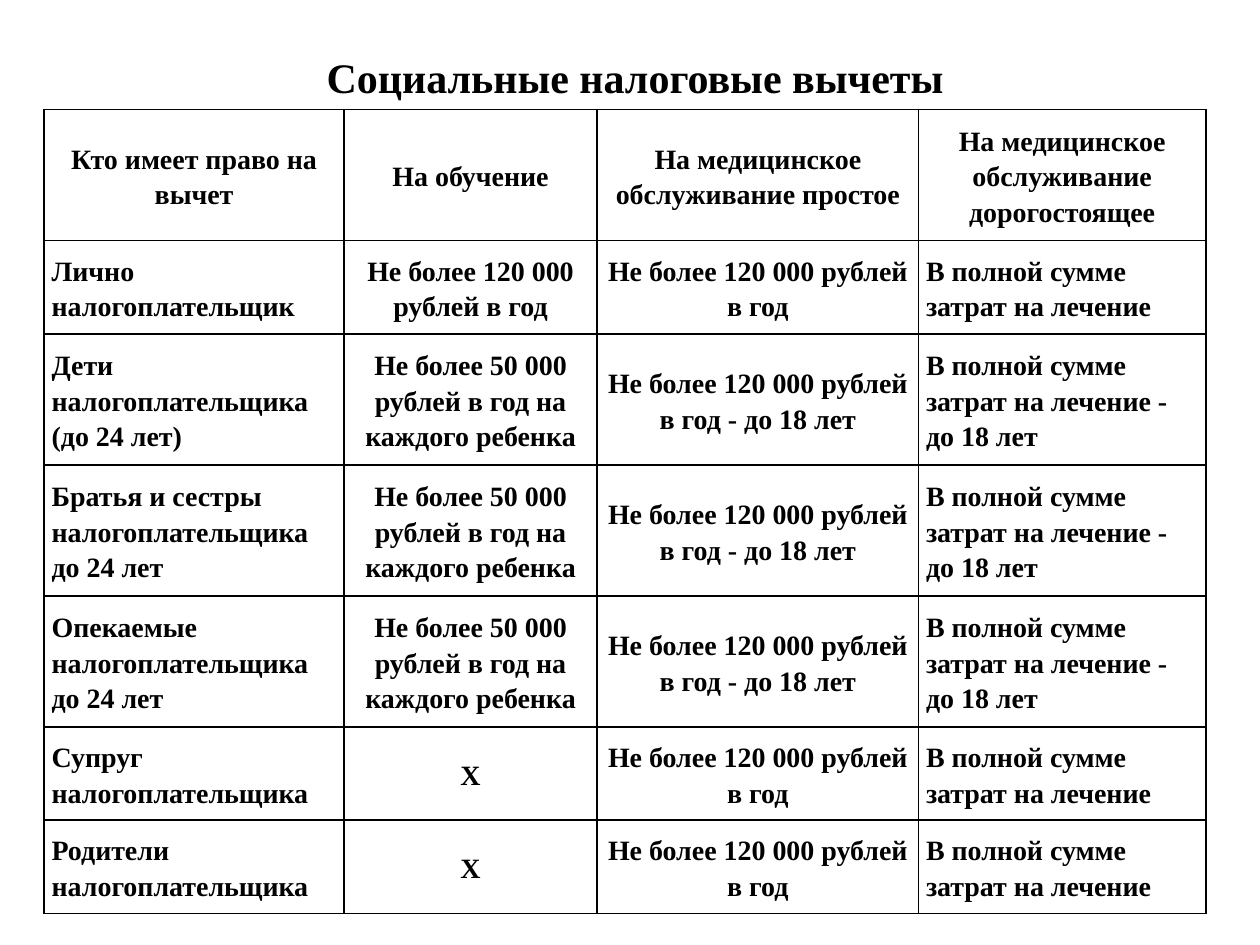
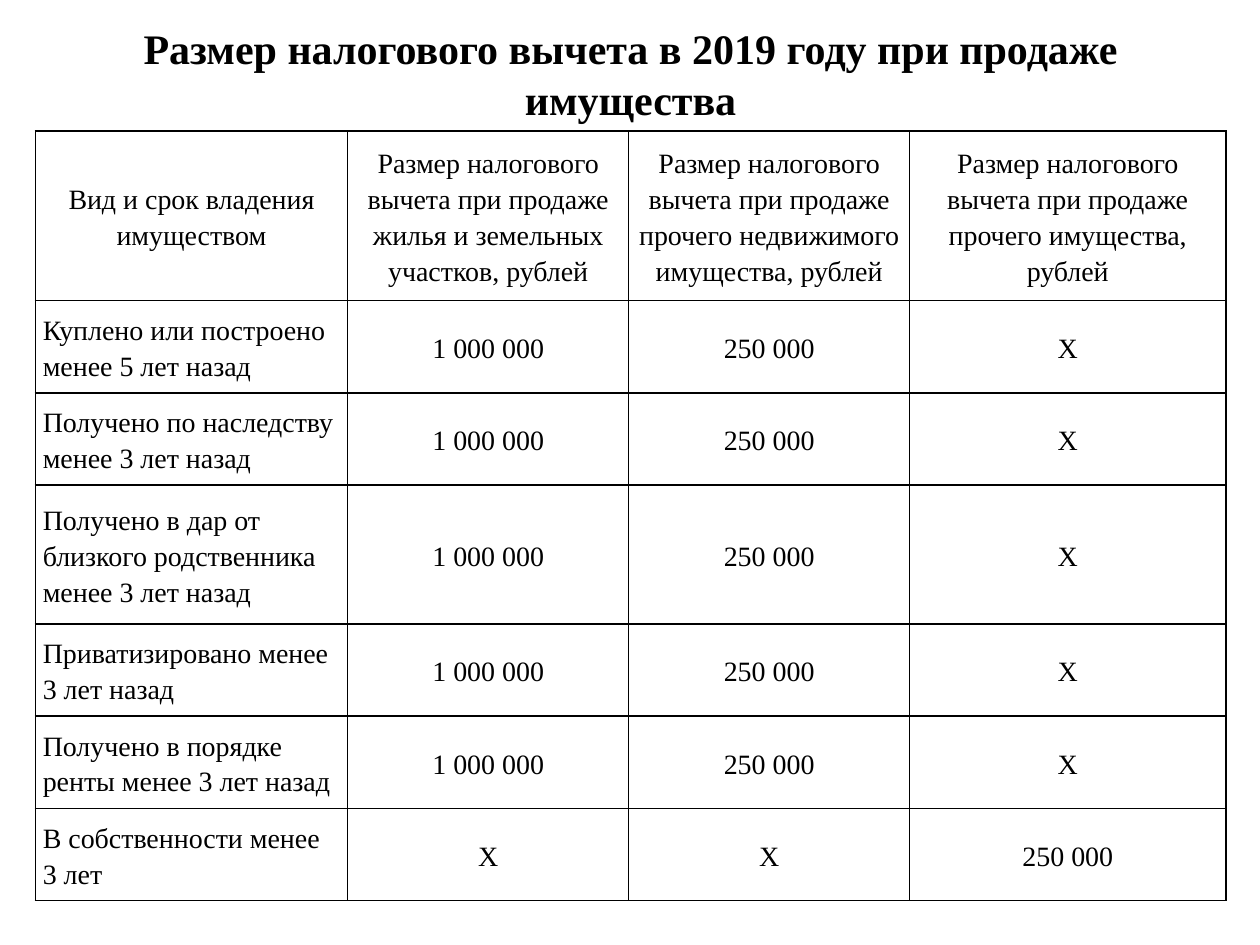
from dataclasses import dataclass

from lxml.etree import SubElement
from pptx import Presentation
from pptx.dml.color import RGBColor
from pptx.enum.text import MSO_ANCHOR, MSO_AUTO_SIZE, PP_ALIGN
from pptx.oxml.ns import qn
from pptx.util import Inches, Pt


@dataclass(frozen=True)
class Theme:
    font: str = "Times New Roman"
    ink: str = "000000"
    paper: str = "FFFFFF"
    title_size: float = 24
    cell_size: float = 16
    cell_spacing: float = 1.15
    cell_margin: float = 0.06
    border_width: float = 1


class Deck:
    TITLE_ONLY = 5

    def __init__(self, theme):
        self.theme = theme
        self.presentation = Presentation()
        self.presentation.slide_width = Inches(10)
        self.presentation.slide_height = Inches(7.5)
        self.slide = None

    def add_slide(self):
        layout = self.presentation.slide_layouts[self.TITLE_ONLY]
        self.slide = self.presentation.slides.add_slide(layout)
        background = self.slide.background.fill
        background.solid()
        background.fore_color.rgb = RGBColor.from_string(self.theme.paper)

    def style_paragraph(self, paragraph, size, bold, align):
        paragraph.alignment = align
        for run in paragraph.runs:
            run.font.name = self.theme.font
            run.font.size = Pt(size)
            run.font.bold = bold
            run.font.color.rgb = RGBColor.from_string(self.theme.ink)

    def title(self, text, left, top, width, height):
        heading = self.slide.shapes.title
        heading.left, heading.top = Inches(left), Inches(top)
        heading.width, heading.height = Inches(width), Inches(height)
        frame = heading.text_frame
        frame.text = text
        frame.word_wrap = True
        frame.auto_size = MSO_AUTO_SIZE.SHAPE_TO_FIT_TEXT
        frame.vertical_anchor = MSO_ANCHOR.TOP
        self.style_paragraph(frame.paragraphs[0], self.theme.title_size, True, PP_ALIGN.CENTER)

    def draw_borders(self, cell):
        properties = cell._tc.get_or_add_tcPr()
        for side in ("a:lnL", "a:lnR", "a:lnT", "a:lnB"):
            line = SubElement(properties, qn(side), w=str(Pt(self.theme.border_width)))
            fill = SubElement(line, qn("a:solidFill"))
            SubElement(fill, qn("a:srgbClr"), val=self.theme.ink)

    def cell(self, cell, text, bold, align):
        self.draw_borders(cell)
        cell.fill.solid()
        cell.fill.fore_color.rgb = RGBColor.from_string(self.theme.paper)
        margin = Inches(self.theme.cell_margin)
        cell.margin_left = cell.margin_right = margin
        cell.margin_top = cell.margin_bottom = margin
        cell.vertical_anchor = MSO_ANCHOR.MIDDLE
        cell.text_frame.text = text
        paragraph = cell.text_frame.paragraphs[0]
        paragraph.line_spacing = self.theme.cell_spacing
        self.style_paragraph(paragraph, self.theme.cell_size, bold, align)

    def table(self, rows, left, top, widths, heights, left_columns, bold=False):
        """Centre every cell except those below the header in left_columns."""
        table = self.slide.shapes.add_table(
            len(rows), len(widths), Inches(left), Inches(top),
            Inches(sum(widths)), Inches(sum(heights))).table
        table.first_row = table.horz_banding = False
        for column, width in zip(table.columns, widths):
            column.width = Inches(width)
        for row, height in zip(table.rows, heights):
            row.height = Inches(height)
        for r, texts in enumerate(rows):
            for c, text in enumerate(texts):
                at_left = r > 0 and c in left_columns
                align = PP_ALIGN.LEFT if at_left else PP_ALIGN.CENTER
                self.cell(table.cell(r, c), text, bold, align)


NO_DEDUCTION = "Х"


def social_deductions(deck):
    yearly = "Не более 120 000 рублей в год"
    per_child = "Не более 50 000 рублей в год на каждого ребенка"
    full_cost = "В полной сумме затрат на лечение"
    under_18 = " - до 18 лет"
    child_limits = (per_child, yearly + under_18, full_cost + under_18)
    relative_limits = (NO_DEDUCTION, yearly, full_cost)
    rows = [
        ("Кто имеет право на вычет", "На обучение",
         "На медицинское обслуживание простое",
         "На медицинское обслуживание дорогостоящее"),
        ("Лично налогоплательщик", yearly, yearly, full_cost),
        ("Дети налогоплательщика (до 24 лет)", *child_limits),
        ("Братья и сестры налогоплательщика до 24 лет", *child_limits),
        ("Опекаемые налогоплательщика до 24 лет", *child_limits),
        ("Супруг налогоплательщика", *relative_limits),
        ("Родители налогоплательщика", *relative_limits),
    ]
    two_lines, three_lines = 0.74, 1.04
    heights = [three_lines, two_lines] + [three_lines] * 3 + [two_lines] * 2
    deck.add_slide()
    deck.title("Социальные налоговые вычеты", 0.75, 0.36, 8.58, 0.5)
    deck.table(rows, 0.35, 0.87, [2.38, 2.01, 2.55, 2.28], heights,
               left_columns=(0, 3), bold=True)


def property_sale_deductions(deck):
    housing, other = "1 000 000", "250 000"
    header_start = "Размер налогового вычета при продаже "
    sold_objects = ("жилья и земельных участков", "прочего недвижимого имущества",
                    "прочего имущества")
    real_estate = (
        "Куплено или построено менее 5 лет назад",
        "Получено по наследству менее 3 лет назад",
        "Получено в дар от близкого родственника менее 3 лет назад",
        "Приватизировано менее 3 лет назад",
        "Получено в порядке ренты менее 3 лет назад",
    )
    rows = [
        ("Вид и срок владения имуществом",
         *(f"{header_start}{sold}, рублей" for sold in sold_objects)),
        *((origin, housing, other, NO_DEDUCTION) for origin in real_estate),
        ("В собственности менее 3 лет", NO_DEDUCTION, NO_DEDUCTION, other),
    ]
    two_lines = 0.72
    heights = [1.34, two_lines, two_lines, 1.1] + [two_lines] * 3
    deck.add_slide()
    deck.title("Размер налогового вычета в 2019 году при продаже имущества",
               0.28, 0.13, 9.45, 0.91)
    deck.table(rows, 0.28, 1.04, [2.48, 2.23, 2.23, 2.51], heights, left_columns=(0,))


def main():
    deck = Deck(Theme())
    social_deductions(deck)
    property_sale_deductions(deck)
    deck.presentation.save("out.pptx")


if __name__ == "__main__":
    main()
